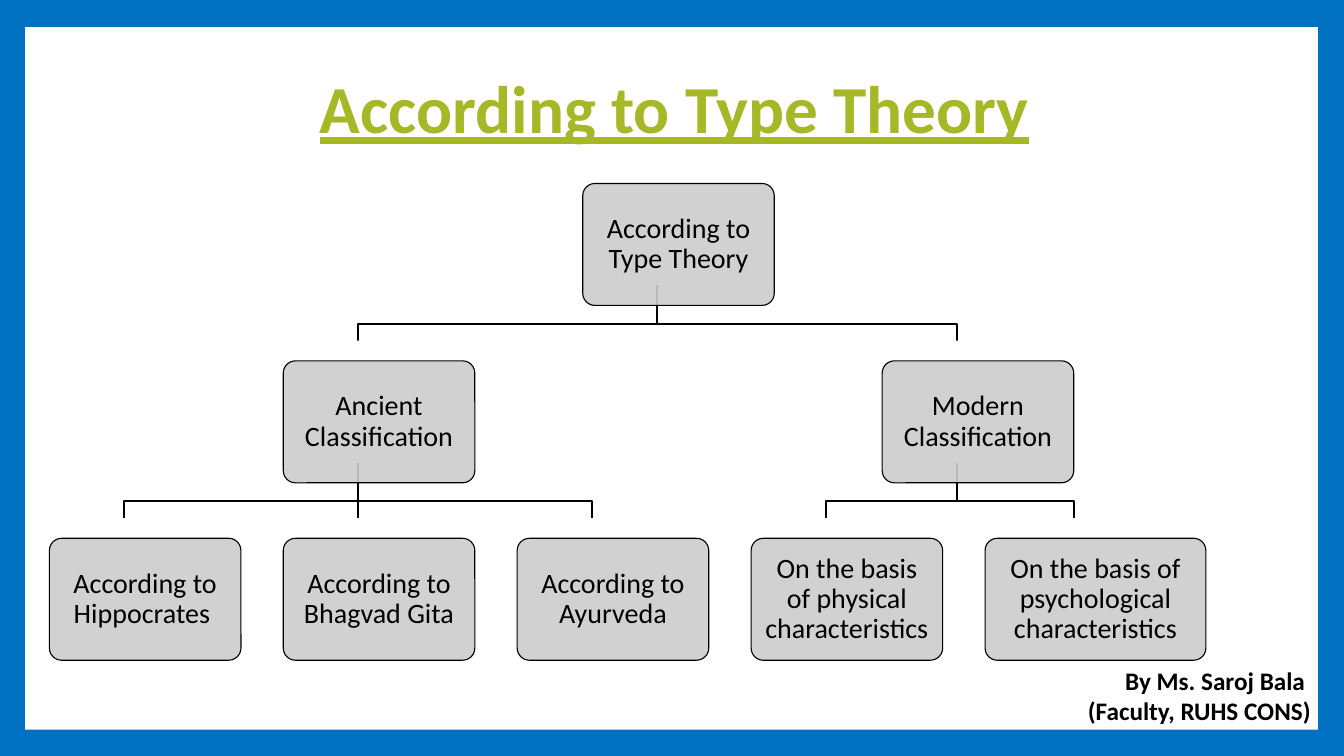
from dataclasses import dataclass, field
from itertools import count
from typing import Iterator

from lxml.etree import SubElement
from pptx import Presentation
from pptx.dml.color import RGBColor
from pptx.enum.shapes import MSO_CONNECTOR as Connector, MSO_SHAPE as Preset
from pptx.enum.text import MSO_ANCHOR as Anchor, PP_ALIGN as Align
from pptx.oxml.ns import qn
from pptx.util import Pt

PX = 9144  # 100 px to the inch
FONT = "Calibri"
COLORS = {"frame": "0070C0", "paper": "FFFFFF", "title": "A6B727",
          "card": "CCCCCC", "ink": "000000"}

CARD_WIDTH, CARD_HEIGHT = 190, 121
LEAF_LEFT, LEAF_STEP = 28, 232
TREE_TOP, LEVEL_STEP = 162, 176
BEND = 38  # from a card's bottom to the crossbar of its links
OFFSET_X, OFFSET_Y = 21, 20  # from a backing card to its front card


@dataclass
class Topic:
    text: str
    children: list["Topic"] = field(default_factory=list)
    width: int = CARD_WIDTH
    left: int = 0
    top: int = 0

    @property
    def center(self) -> int:
        return self.left + self.width // 2

    @property
    def bottom(self) -> int:
        return self.top + CARD_HEIGHT


TREE = Topic("According to Type Theory", [
    Topic("Ancient Classification", [
        Topic("According to Hippocrates "),
        Topic("According to Bhagvad Gita"),
        Topic("According to Ayurveda"),
    ]),
    Topic("Modern Classification", [
        Topic("On the basis of physical characteristics "),
        Topic("On the basis of psychological characteristics", width=219),
    ]),
])


def color(name: str) -> RGBColor:
    return RGBColor.from_string(COLORS[name])


def place(topic: Topic, leaves: Iterator[int], level: int = 0) -> None:
    """Leaves stand in equal steps; a parent is centred over its children."""
    topic.top = TREE_TOP + level * LEVEL_STEP
    if not topic.children:
        topic.left = LEAF_LEFT + LEAF_STEP * next(leaves)
        return
    for child in topic.children:
        place(child, leaves, level + 1)
    first, last = topic.children[0], topic.children[-1]
    topic.left = (first.left + last.left + last.width - topic.width) // 2


def walk(topic: Topic) -> Iterator[Topic]:
    yield topic
    for child in topic.children:
        yield from walk(child)


def add_box(page, preset, left: int, top: int, width: int, height: int, fill: str):
    box = page.shapes.add_shape(preset, left * PX, top * PX, width * PX, height * PX)
    box.shadow.inherit = False
    box.fill.solid()
    box.fill.fore_color.rgb = color(fill)
    box.line.fill.background()
    return box


def add_text_box(page, left: int, top: int, width: int, height: int):
    return page.shapes.add_textbox(left * PX, top * PX, width * PX, height * PX)


def write(para, text: str, size: int, ink: str, align, bold: bool = False):
    para.alignment = align
    run = para.add_run()
    run.text = text
    run.font.name = FONT
    run.font.size = Pt(size)
    run.font.bold = bold
    run.font.color.rgb = color(ink)
    return run


def draw_link(page, parent: Topic, child: Topic) -> None:
    if parent.center == child.center:
        link = page.shapes.add_connector(
            Connector.STRAIGHT, parent.center * PX, parent.bottom * PX,
            child.center * PX, child.top * PX)
        SubElement(link._element.spPr, qn("a:effectLst"))
    else:
        bar = parent.bottom + BEND
        outline = page.shapes.build_freeform(parent.center, parent.bottom, scale=PX)
        outline.add_line_segments(
            [(parent.center, bar), (child.center, bar), (child.center, child.top)],
            close=False)
        link = outline.convert_to_shape()
        link.shadow.inherit = False
        link.fill.background()
    link.line.color.rgb = color("ink")
    link.line.width = Pt(1.5)


def draw_card(page, topic: Topic) -> None:
    back = add_box(page, Preset.ROUNDED_RECTANGLE, topic.left, topic.top,
                   topic.width, CARD_HEIGHT, "paper")
    front = add_box(page, Preset.ROUNDED_RECTANGLE, topic.left + OFFSET_X,
                    topic.top + OFFSET_Y, topic.width, CARD_HEIGHT, "card")
    for box in (back, front):
        box.adjustments[0] = 0.1
    tint = front._element.spPr.find(qn("a:solidFill"))[0]
    SubElement(tint, qn("a:alpha"), val="90000")
    front.line.color.rgb = color("ink")
    front.line.width = Pt(0.79)

    frame = front.text_frame
    frame.word_wrap = True
    frame.vertical_anchor = Anchor.MIDDLE
    frame.margin_left = frame.margin_right = 8 * PX
    frame.margin_top = frame.margin_bottom = 8 * PX
    para = frame.paragraphs[0]
    para.line_spacing = 0.9
    write(para, topic.text, 20, "ink", Align.CENTER)


def main() -> None:
    deck = Presentation()
    deck.slide_width, deck.slide_height = 1333 * PX, 750 * PX
    page = deck.slides.add_slide(deck.slide_layouts[6])

    # Blue frame around a white sheet
    page.background.fill.solid()
    page.background.fill.fore_color.rgb = color("frame")
    add_box(page, Preset.RECTANGLE, 25, 27, 1282, 697, "paper")

    # Title
    frame = add_text_box(page, 129, 37, 1080, 148).text_frame
    frame.word_wrap = True
    frame.vertical_anchor = Anchor.MIDDLE
    para = frame.paragraphs[0]
    para.line_spacing = 0.9
    heading = write(para, "According to Type Theory", 48, "title", Align.CENTER, bold=True)
    heading.font.underline = True

    # Tree: links below, cards above
    place(TREE, count())
    for topic in walk(TREE):
        for child in topic.children:
            draw_link(page, topic, child)
    for topic in walk(TREE):
        draw_card(page, topic)

    # Author
    frame = add_text_box(page, 1066, 655, 244, 71).text_frame
    frame.word_wrap = False
    write(frame.paragraphs[0], "By Ms. Saroj Bala ", 18, "ink", Align.RIGHT, bold=True)
    write(frame.add_paragraph(), "(Faculty, RUHS CONS)", 18, "ink", Align.RIGHT, bold=True)

    deck.save("out.pptx")


if __name__ == "__main__":
    main()
